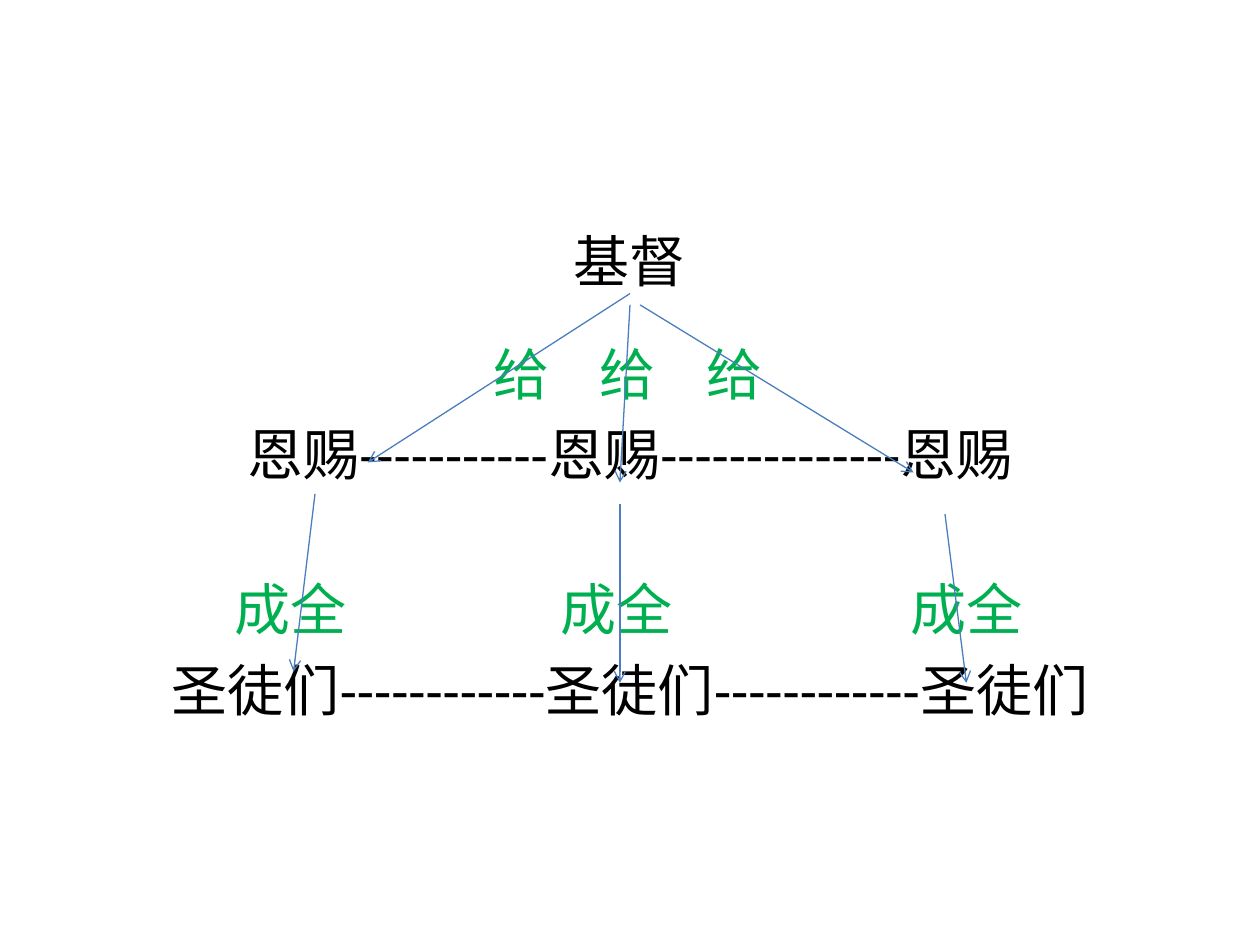
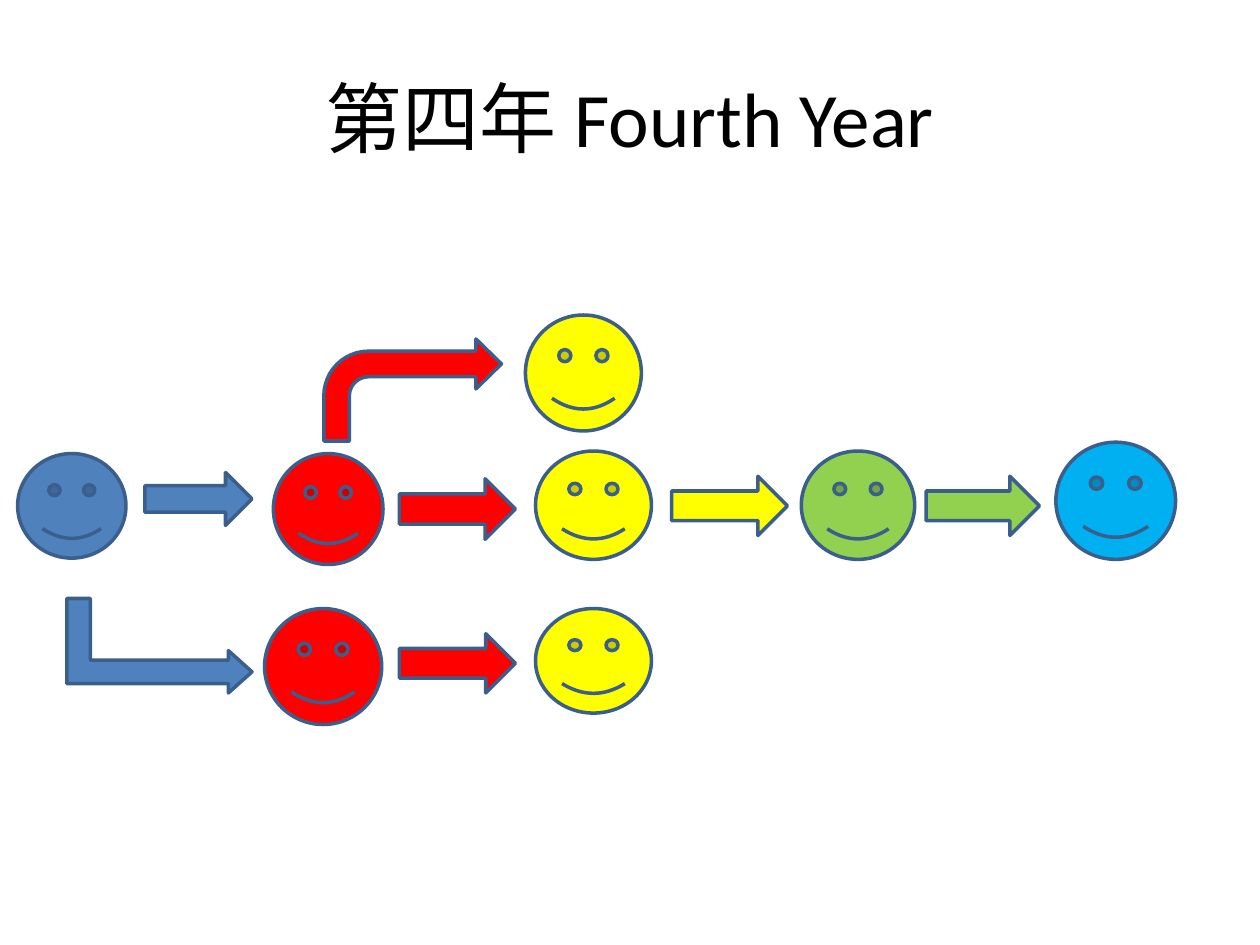
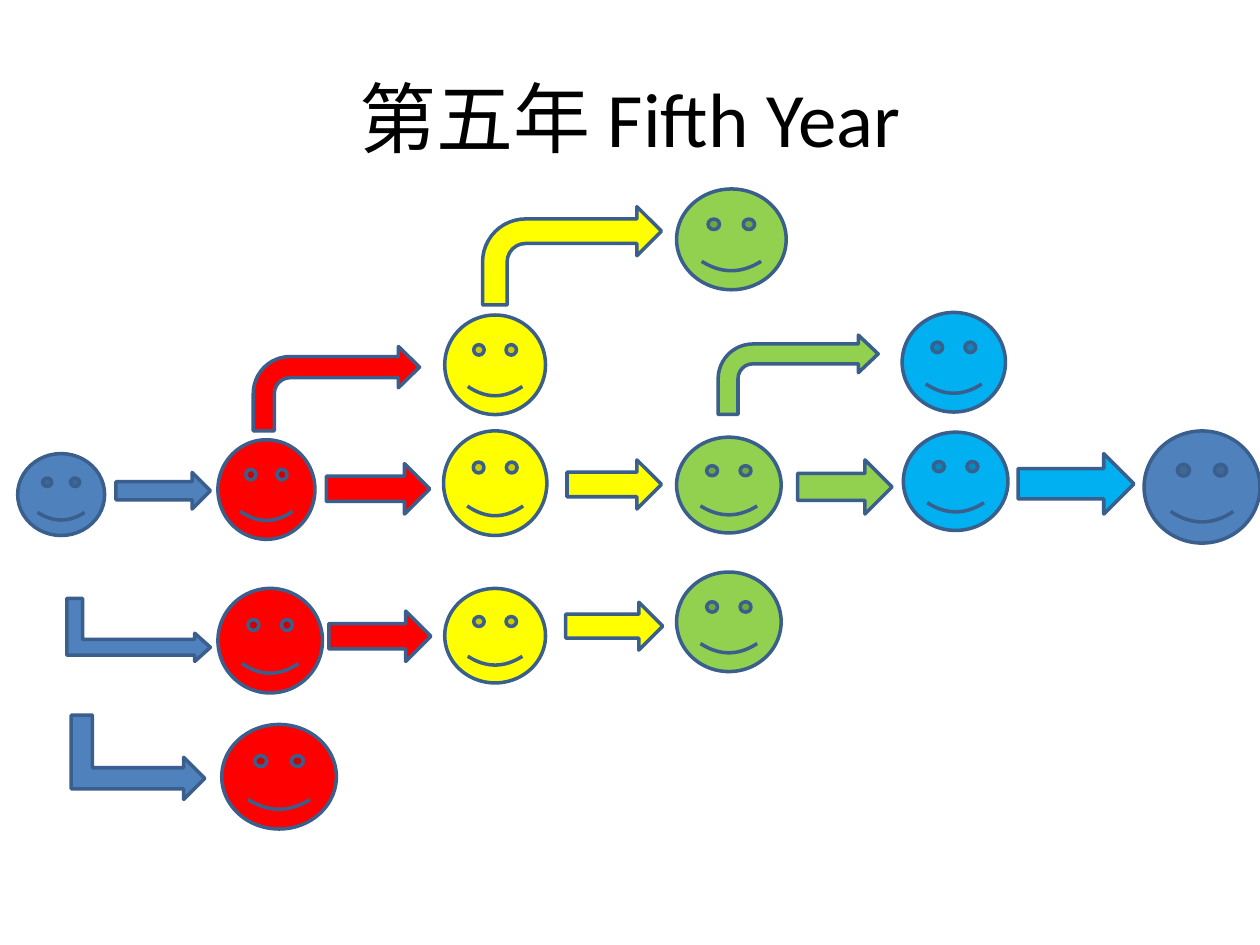
import pptx
import pptx.util
import pptx.dml.color
import pptx.enum.shapes
import pptx.enum.text
import pptx.oxml
import pptx.oxml.ns

Inches, Pt = pptx.util.Inches, pptx.util.Pt
RGB = pptx.dml.color.RGBColor.from_string
SHAPE = pptx.enum.shapes.MSO_SHAPE
CENTER = pptx.enum.text.PP_ALIGN.CENTER
MIDDLE = pptx.enum.text.MSO_ANCHOR.MIDDLE
NS = pptx.oxml.ns.nsdecls("a")

THEME = {
    "ink": "000000", "leaf": "00B050", "link": "4B7EBC", "edge": "3A5F8C",
    "blue": "4F81BD", "red": "FF0000", "yellow": "FFFF00",
    "green": "92D050", "sky": "00B0F0",
    "title": {"name": "Calibri", "size": Pt(44)},
    "body": {"name": "Calibri", "size": Pt(32)},
    "thin": Pt(0.75), "thick": Pt(2),
}
TITLE_BOX = (0.5, 0.3, 9, 1.25)
BODY_BOX = (0.5, 1.75, 9, 4.95)
WORD_WIDTH, WORD_HEIGHT = 0.5, 0.6

# text, space before in points
GIFTS = [
    ("基督", None),
    ("恩赐-----------恩赐--------------恩赐", 71.5),
    ("圣徒们------------圣徒们------------圣徒们", 96.7),
]
# word, middle height, centres across
DEEDS = [
    ("给", 2.96, (4.14, 4.98, 5.83)),
    ("成全", 4.83, (2.31, 4.89, 7.67)),
]
LINKS = [
    (5, 2.33, 2.92, 3.67), (5, 2.42, 4.92, 3.83), (5.08, 2.42, 7.25, 3.75),
    (2.5, 3.92, 2.33, 5.33), (4.92, 4, 4.92, 5.42), (7.5, 4.08, 7.67, 5.42),
]

# preset shape, rotation
KINDS = {
    "face": (SHAPE.SMILEY_FACE, 0),
    "next": (SHAPE.RIGHT_ARROW, 0),
    "rise": (SHAPE.BENT_ARROW, 0),
    "drop": (SHAPE.BENT_UP_ARROW, 90),
}
# kind, colour, left, top, width, height, then the arrow's second adjustment
YEARS = {
    "第四年 Fourth Year": [
        ("rise", "red", 2.57, 2.69, 1.41, 0.81, 0.245),
        ("face", "yellow", 4.17, 2.5, 0.92, 0.92),
        ("face", "blue", 0.14, 3.6, 0.86, 0.83),
        ("next", "blue", 1.15, 3.75, 0.85, 0.42),
        ("face", "red", 2.17, 3.6, 0.87, 0.88),
        ("next", "red", 3.17, 3.8, 0.92, 0.48),
        ("face", "yellow", 4.25, 3.58, 0.92, 0.86),
        ("next", "yellow", 5.33, 3.78, 0.92, 0.47),
        ("face", "green", 6.36, 3.58, 0.9, 0.86),
        ("next", "green", 7.35, 3.78, 0.9, 0.47),
        ("face", "sky", 8.38, 3.51, 0.95, 0.93),
        ("drop", "blue", 0.89, 4.39, 0.75, 1.47, 0.224),
        ("face", "red", 2.1, 4.83, 0.93, 0.92),
        ("next", "red", 3.17, 5.03, 0.92, 0.47),
        ("face", "yellow", 4.25, 4.83, 0.92, 0.83),
    ],
    "第五年 Fifth Year": [
        ("rise", "yellow", 3.83, 1.64, 1.42, 0.78),
        ("face", "green", 5.37, 1.5, 0.87, 0.8),
        ("rise", "red", 2.01, 2.75, 1.32, 0.67, 0.245),
        ("face", "yellow", 3.53, 2.5, 0.8, 0.79),
        ("rise", "green", 5.7, 2.66, 1.27, 0.63, 0.237),
        ("face", "sky", 7.16, 2.48, 0.82, 0.79),
        ("face", "blue", 0.14, 3.6, 0.69, 0.65),
        ("next", "blue", 0.92, 3.75, 0.75, 0.29),
        ("face", "red", 1.73, 3.49, 0.77, 0.79),
        ("next", "red", 2.59, 3.68, 0.82, 0.4),
        ("face", "yellow", 3.52, 3.42, 0.82, 0.83),
        ("next", "yellow", 4.5, 3.65, 0.75, 0.39),
        ("face", "green", 5.37, 3.47, 0.83, 0.76),
        ("next", "green", 6.33, 3.65, 0.75, 0.43),
        ("face", "sky", 7.17, 3.43, 0.83, 0.78),
        ("next", "sky", 8.08, 3.6, 0.92, 0.48),
        ("face", "blue", 9.08, 3.42, 0.92, 0.89),
        ("drop", "blue", 0.85, 4.43, 0.5, 1.14, 0.224),
        ("face", "red", 1.73, 4.67, 0.83, 0.83),
        ("next", "red", 2.61, 4.85, 0.81, 0.4),
        ("face", "yellow", 3.53, 4.67, 0.8, 0.75),
        ("next", "yellow", 4.49, 4.78, 0.77, 0.38),
        ("face", "green", 5.37, 4.54, 0.83, 0.79),
        ("drop", "blue", 0.76, 5.48, 0.67, 1.06),
        ("face", "red", 1.76, 5.75, 0.91, 0.83),
    ],
}


def style(item, form):
    for key, value in form.items():
        setattr(item, key, value)


def place(item, box):
    sides = ("left", "top", "width", "height")
    style(item, dict(zip(sides, map(Inches, box))))


def write(para, text, font, tint):
    para.alignment = CENTER
    run = para.add_run()
    run.text = text
    style(run.font, THEME[font])
    run.font.color.rgb = RGB(THEME[tint])


def clear_bullet(para):
    prop = para._p.get_or_add_pPr()
    prop.set("marL", "0")
    prop.set("indent", "0")
    prop.append(pptx.oxml.parse_xml(f"<a:buNone {NS}/>"))


def add_word(slide, text, x, y):
    """Centre a word on the point x, y."""
    wide = WORD_WIDTH * len(text)
    box = (x - wide / 2, y - WORD_HEIGHT / 2, wide, WORD_HEIGHT)
    frame = slide.shapes.add_textbox(*map(Inches, box)).text_frame
    style(frame, {
        "word_wrap": True, "vertical_anchor": MIDDLE,
        "margin_left": 0, "margin_right": 0,
        "margin_top": 0, "margin_bottom": 0,
    })
    write(frame.paragraphs[0], text, "body", "leaf")


def add_link(slide, ends):
    line = slide.shapes.add_connector(
        pptx.enum.shapes.MSO_CONNECTOR.STRAIGHT, *map(Inches, ends))
    line.line.color.rgb = RGB(THEME["link"])
    line.line.width = THEME["thin"]
    line.line._get_or_add_ln().append(
        pptx.oxml.parse_xml(f'<a:tailEnd {NS} type="arrow"/>'))
    line._element.spPr.append(pptx.oxml.parse_xml(f"<a:effectLst {NS}/>"))


def add_gifts(deck):
    slide = deck.slides.add_slide(deck.slide_layouts[1])
    head = slide.shapes.title._element
    head.getparent().remove(head)
    body = slide.placeholders[1]
    place(body, BODY_BOX)
    frame = body.text_frame
    for row, (text, gap) in enumerate(GIFTS):
        para = frame.add_paragraph() if row else frame.paragraphs[0]
        if gap:
            para.space_before = Pt(gap)
        clear_bullet(para)
        write(para, text, "body", "ink")
    for text, y, spots in DEEDS:
        for x in spots:
            add_word(slide, text, x, y)
    for ends in LINKS:
        add_link(slide, ends)


def add_mark(slide, kind, tint, x, y, w, h, bend=None):
    preset, turn = KINDS[kind]
    mark = slide.shapes.add_shape(preset, *map(Inches, (x, y, w, h)))
    mark.rotation = turn
    mark.shadow.inherit = False
    mark.fill.solid()
    mark.fill.fore_color.rgb = RGB(THEME[tint])
    mark.line.color.rgb = RGB(THEME["edge"])
    mark.line.width = THEME["thick"]
    if bend:
        mark.adjustments[1] = bend


def add_year(deck, name, marks):
    slide = deck.slides.add_slide(deck.slide_layouts[5])
    title = slide.shapes.title
    place(title, TITLE_BOX)
    write(title.text_frame.paragraphs[0], name, "title", "ink")
    for mark in marks:
        add_mark(slide, *mark)


def main():
    deck = pptx.Presentation()
    style(deck, {"slide_width": Inches(10), "slide_height": Inches(7.5)})
    add_gifts(deck)
    for name, marks in YEARS.items():
        add_year(deck, name, marks)
    deck.save("out.pptx")


if __name__ == "__main__":
    main()
